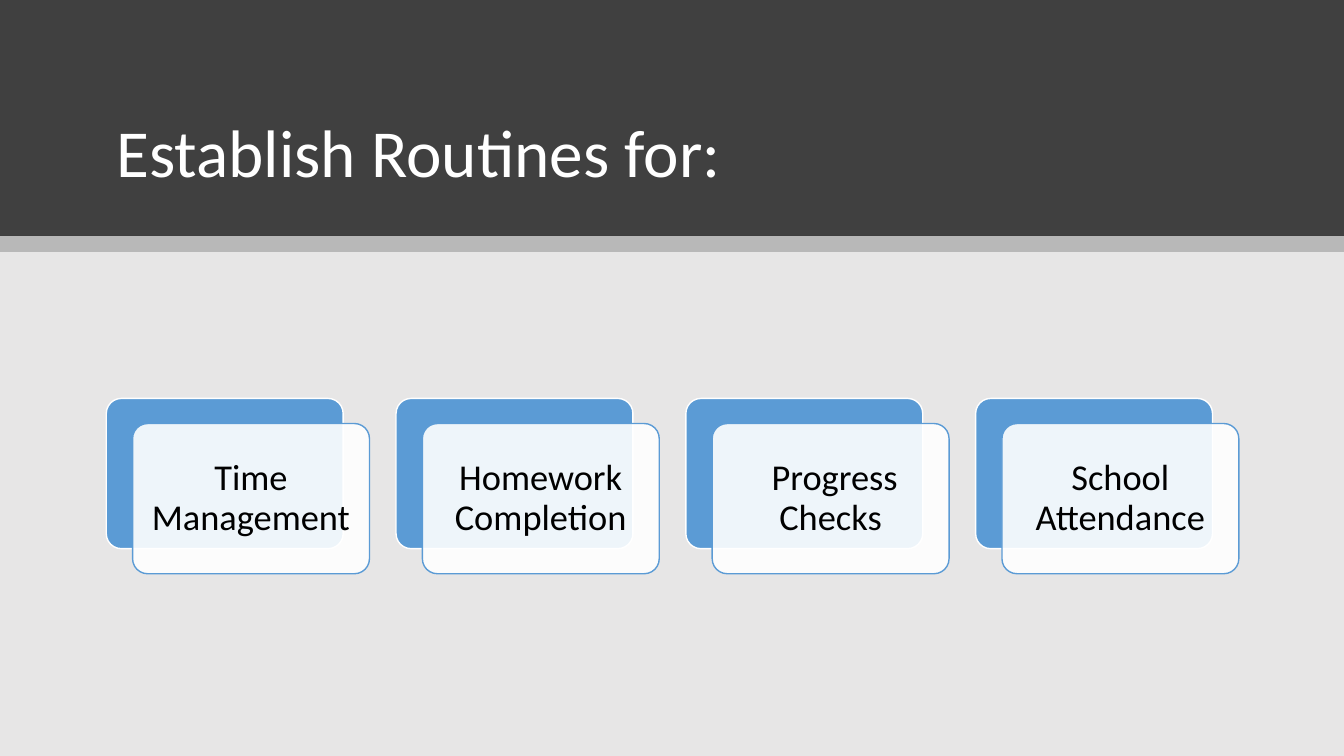
from lxml import etree
from pptx import Presentation
from pptx.dml.color import RGBColor
from pptx.enum.shapes import MSO_SHAPE
from pptx.enum.text import MSO_ANCHOR, PP_ALIGN
from pptx.oxml.ns import qn
from pptx.util import Pt

RECTANGLE, ROUNDED = MSO_SHAPE.RECTANGLE, MSO_SHAPE.ROUNDED_RECTANGLE
MIDDLE, BOTTOM = MSO_ANCHOR.MIDDLE, MSO_ANCHOR.BOTTOM
LEFT, CENTER = PP_ALIGN.LEFT, PP_ALIGN.CENTER

WHITE = RGBColor(0xFF, 0xFF, 0xFF)
BLACK = RGBColor(0x00, 0x00, 0x00)
CHARCOAL = RGBColor(0x40, 0x40, 0x40)
PALE_GRAY = RGBColor(0xE7, 0xE6, 0xE6)
BLUE = RGBColor(0x5B, 0x9B, 0xD5)

SLIDE_W, SLIDE_H = 960, 540
HEADER_H, STRIP_H = 168.5, 11.5
CARD_W, CARD_H = 169.2, 107.3
CARD_LEFT, CARD_TOP, CARD_PITCH = 75.9, 284.6, 207
FRONT_DX, FRONT_DY = 18.8, 17.9

ROUTINES = ["Time Management", "Homework Completion",
            " Progress Checks", "School Attendance"]


class RoutineSlide:
    """Holds the text style and the slide being built."""

    font_name = "Calibri"
    line_spacing = 0.9

    def __init__(self, slide):
        self.slide = slide

    def background(self, color):
        fill = self.slide.background.fill
        fill.solid()
        fill.fore_color.rgb = color

    def set_text(self, shape, text, size, color, align, anchor):
        frame = shape.text_frame
        frame.word_wrap = True
        frame.vertical_anchor = anchor
        frame.text = text
        paragraph = frame.paragraphs[0]
        paragraph.alignment = align
        paragraph.line_spacing = self.line_spacing
        paragraph.font.name = self.font_name
        paragraph.font.size = Pt(size)
        paragraph.font.color.rgb = color

    def box(self, kind, left, top, width, height, color, line=None, opacity=100):
        shape = self.slide.shapes.add_shape(
            kind, Pt(left), Pt(top), Pt(width), Pt(height))
        shape.shadow.inherit = False
        shape.fill.solid()
        shape.fill.fore_color.rgb = color
        if opacity < 100:
            srgb = shape.element.spPr.find(qn("a:solidFill")).find(qn("a:srgbClr"))
            etree.SubElement(srgb, qn("a:alpha"), val=str(opacity * 1000))
        if line is None:
            shape.line.fill.background()
        else:
            shape.line.color.rgb = line
            shape.line.width = Pt(1)
        return shape

    def title(self, text, left, top, width, height):
        title = self.slide.shapes.title
        title.left, title.top = Pt(left), Pt(top)
        title.width, title.height = Pt(width), Pt(height)
        self.set_text(title, text, 48, WHITE, LEFT, BOTTOM)
        # Bring the title in front of the header band
        title.element.getparent().append(title.element)

    def card(self, text, left, top):
        back = self.box(ROUNDED, left, top, CARD_W, CARD_H, BLUE, WHITE)
        front = self.box(ROUNDED, left + FRONT_DX, top + FRONT_DY,
                         CARD_W, CARD_H, WHITE, BLUE, opacity=90)
        back.adjustments[0] = front.adjustments[0] = 0.1
        frame = front.text_frame
        frame.margin_left = frame.margin_right = Pt(8)
        frame.margin_top = frame.margin_bottom = Pt(8)
        self.set_text(front, text, 26, BLACK, CENTER, MIDDLE)


def main():
    deck = Presentation()
    deck.slide_width, deck.slide_height = Pt(SLIDE_W), Pt(SLIDE_H)
    page = RoutineSlide(deck.slides.add_slide(deck.slide_layouts[5]))

    # Header
    page.background(PALE_GRAY)
    page.box(RECTANGLE, 0, 0, SLIDE_W, HEADER_H, CHARCOAL)
    page.box(RECTANGLE, 0, HEADER_H, SLIDE_W, STRIP_H, BLACK, opacity=20)
    page.title("Establish Routines for:", 75.9, 33.8, 809, 107.3)

    # Row of routine cards
    for column, routine in enumerate(ROUTINES):
        page.card(routine, CARD_LEFT + column * CARD_PITCH, CARD_TOP)

    deck.save("out.pptx")


if __name__ == "__main__":
    main()
